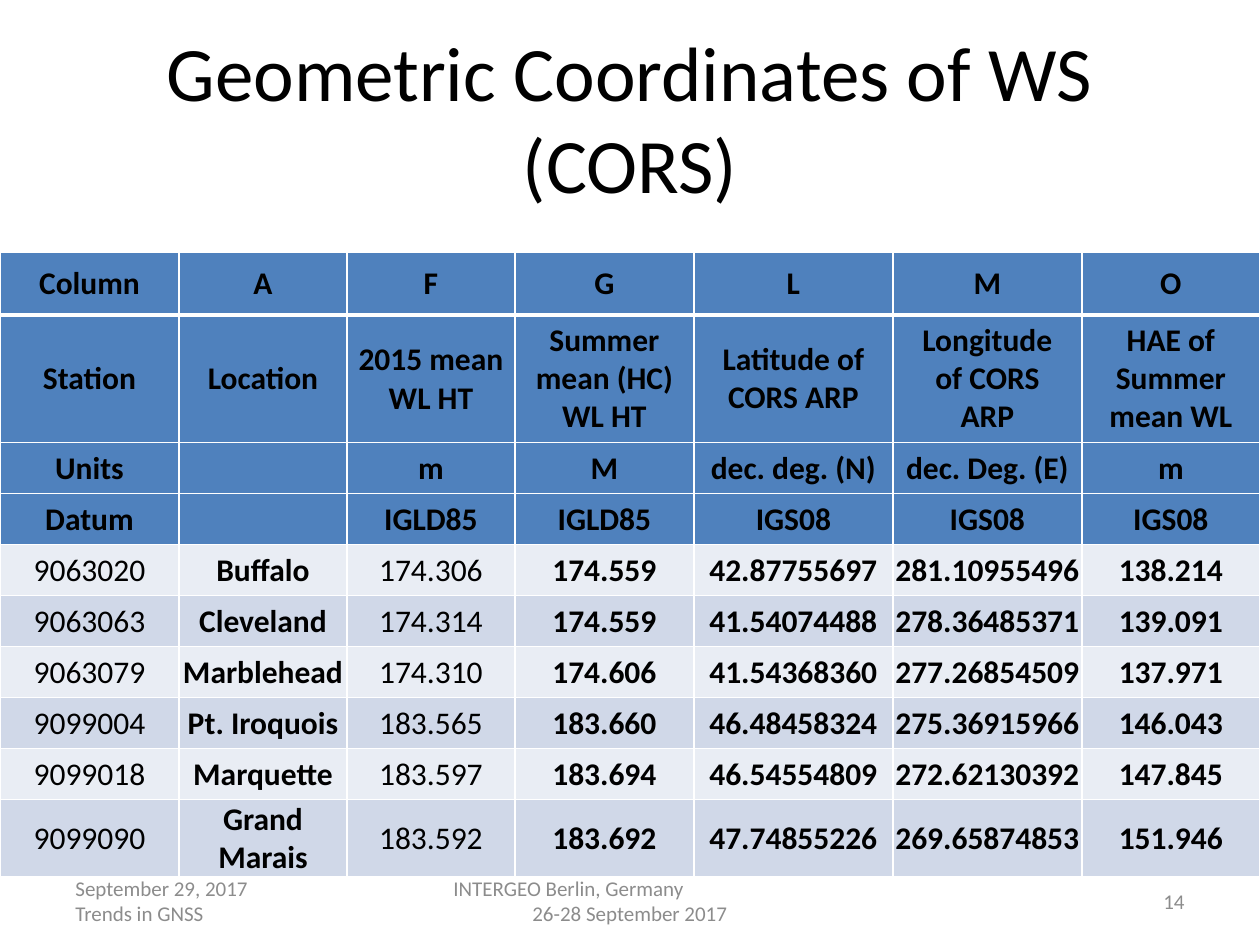
from typing import NamedTuple

from lxml.etree import SubElement
from pptx import Presentation
from pptx.dml.color import RGBColor
from pptx.enum.text import MSO_ANCHOR, PP_ALIGN
from pptx.oxml.ns import qn
from pptx.util import Pt

EMU_PER_PX = 914400 / 126
FONT = "Calibri"
BLACK = RGBColor(0x00, 0x00, 0x00)
WHITE = RGBColor(0xFF, 0xFF, 0xFF)
GREY = RGBColor(0x8C, 0x8C, 0x8C)
HEADER_BLUE = RGBColor(0x4F, 0x81, 0xBD)
BANDS = (RGBColor(0xE9, 0xED, 0xF4), RGBColor(0xD0, 0xD8, 0xE8))

COLUMN_WIDTHS = (179, 168, 168, 179, 199, 189, 178)
ROW_HEIGHTS = (63, 126, *[51] * 7, 77)
HEADER_ROWS = 4
PLAIN_COLUMNS = (0, 2)  # not bold below the header
TIGHT_INSETS = (1, 1, 1, 0)
WIDE_INSETS = (13, 6, 13, 6)

ROWS = (
    ("Column", "A", "F", "G", "L", "M", "O"),
    ("Station", "Location", "2015 mean WL HT", "Summer mean (HC) WL HT",
     "Latitude of CORS ARP", "Longitude of CORS ARP", "HAE of Summer mean WL"),
    ("Units", "", "m", "M", "dec. deg. (N)", "dec. Deg. (E)", "m"),
    ("Datum", "", "IGLD85", "IGLD85", "IGS08", "IGS08", "IGS08"),
    ("9063020", "Buffalo", "174.306", "174.559", "42.87755697", "281.10955496", "138.214"),
    ("9063063", "Cleveland", "174.314", "174.559", "41.54074488", "278.36485371", "139.091"),
    ("9063079", "Marblehead", "174.310", "174.606", "41.54368360", "277.26854509", "137.971"),
    ("9099004", "Pt. Iroquois", "183.565", "183.660", "46.48458324", "275.36915966", "146.043"),
    ("9099018", "Marquette", "183.597", "183.694", "46.54554809", "272.62130392", "147.845"),
    ("9099090", "Grand Marais", "183.592", "183.692", "47.74855226", "269.65874853", "151.946"),
)


class Footer(NamedTuple):
    left: int
    width: int
    align: PP_ALIGN
    lines: tuple[str, ...]
    indents: tuple[int, ...]


FOOTERS = (
    Footer(63, 294, PP_ALIGN.LEFT, ("September 29, 2017", "Trends in GNSS"), (0, 0)),
    Footer(431, 399, PP_ALIGN.LEFT,
           ("INTERGEO Berlin, Germany", "26-28 September 2017"), (10, 89)),
    Footer(903, 294, PP_ALIGN.RIGHT, ("14",), (0,)),
)


def px(length: int) -> int:
    return round(length * EMU_PER_PX)


def style_font(font, size: int, color: RGBColor, bold: bool = False) -> None:
    font.name, font.size, font.bold = FONT, Pt(size), bold
    font.color.rgb = color


def add_borders(cell, top: int, bottom: int) -> None:
    """Draw white cell edges; widths are in points."""
    properties = cell._tc.get_or_add_tcPr()
    for side, width in (("L", 1), ("R", 1), ("T", top), ("B", bottom)):
        line = SubElement(properties, qn(f"a:ln{side}"), w=str(Pt(width)))
        fill = SubElement(line, qn("a:solidFill"))
        SubElement(fill, qn("a:srgbClr"), val=str(WHITE))


def fill_cell(cell, text: str, row: int, column: int) -> None:
    header = row < HEADER_ROWS
    add_borders(cell, top=3 if row == 1 else 1, bottom=3 if row == 0 else 1)
    cell.fill.solid()
    cell.fill.fore_color.rgb = HEADER_BLUE if header else BANDS[(row - HEADER_ROWS) % 2]
    insets = WIDE_INSETS if row < 2 and column > 2 else TIGHT_INSETS
    cell.margin_left, cell.margin_top, cell.margin_right, cell.margin_bottom = map(px, insets)
    cell.vertical_anchor = MSO_ANCHOR.MIDDLE
    para = cell.text_frame.paragraphs[0]
    para.text = text
    para.alignment = PP_ALIGN.CENTER
    style_font(para.font, 18, BLACK)
    for span in para.runs:
        style_font(span.font, 18, BLACK, header or column not in PLAIN_COLUMNS)


def add_station_table(page) -> None:
    frame = page.shapes.add_table(len(ROWS), len(COLUMN_WIDTHS), 0, px(252),
                                  px(sum(COLUMN_WIDTHS)), px(sum(ROW_HEIGHTS)))
    table = frame.table
    for column, width in zip(table.columns, COLUMN_WIDTHS):
        column.width = px(width)
    for row, height in zip(table.rows, ROW_HEIGHTS):
        row.height = px(height)
    for row, texts in enumerate(ROWS):
        for column, text in enumerate(texts):
            fill_cell(table.cell(row, column), text, row, column)


def add_footer(page, footer: Footer) -> None:
    box = page.shapes.add_textbox(px(footer.left), px(876), px(footer.width), px(50))
    frame = box.text_frame
    frame.word_wrap = True
    frame.vertical_anchor = MSO_ANCHOR.MIDDLE
    frame.text = "\n".join(footer.lines)
    for para, indent in zip(frame.paragraphs, footer.indents):
        para.alignment = footer.align
        para._p.get_or_add_pPr().set("marL", str(px(indent)))
        style_font(para.runs[0].font, 12, GREY)


def add_title(page) -> None:
    title = page.shapes.title
    title.left, title.top, title.width, title.height = map(px, (63, 38, 1134, 158))
    title.text_frame.text = "Geometric Coordinates of WS (CORS)"
    title.text_frame.vertical_anchor = MSO_ANCHOR.MIDDLE
    para = title.text_frame.paragraphs[0]
    para.alignment = PP_ALIGN.CENTER
    style_font(para.runs[0].font, 44, BLACK)


def main() -> None:
    deck = Presentation()
    deck.slide_width, deck.slide_height = px(1260), px(945)
    page = deck.slides.add_slide(deck.slide_layouts[5])
    add_title(page)
    add_station_table(page)
    for footer in FOOTERS:
        add_footer(page, footer)
    deck.save("out.pptx")


if __name__ == "__main__":
    main()
